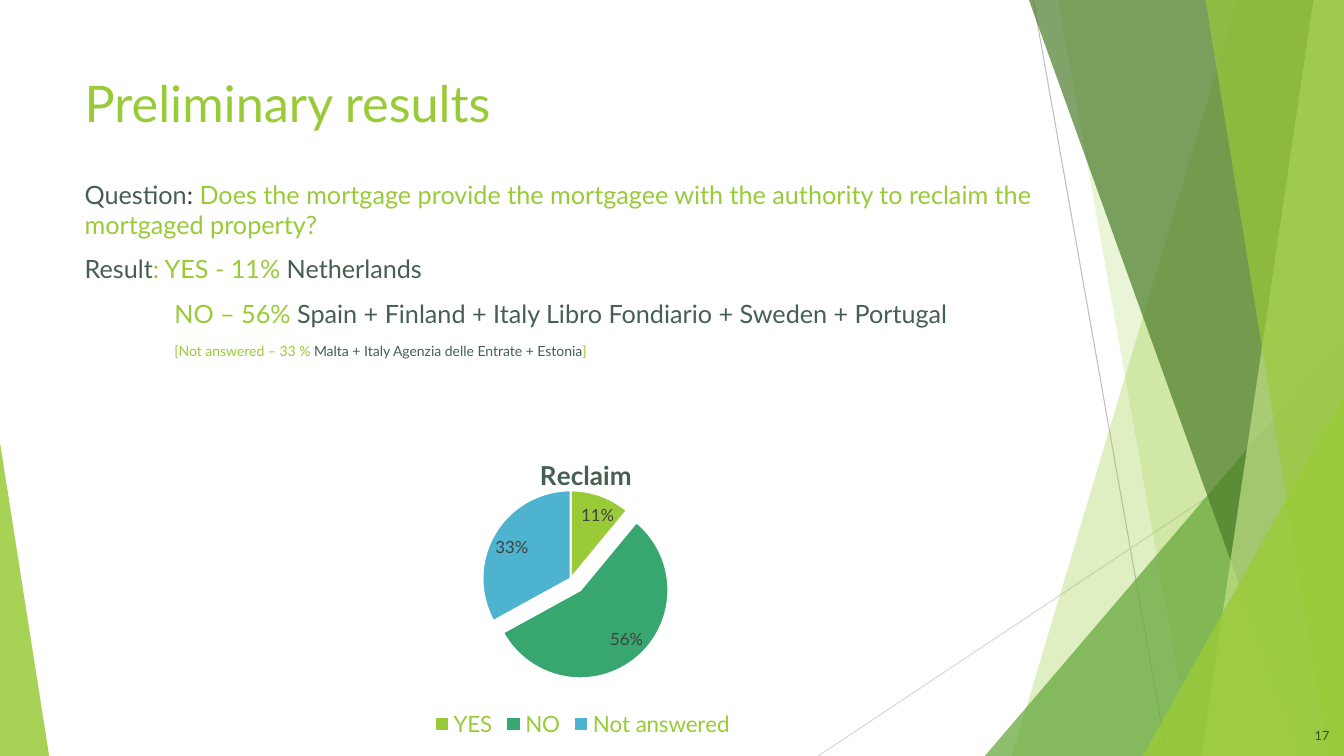
from lxml import etree
from pptx import Presentation
from pptx.chart.data import CategoryChartData as ChartData
from pptx.dml.color import RGBColor
from pptx.enum.chart import XL_CHART_TYPE as Kind, XL_LABEL_POSITION as Spot, XL_LEGEND_POSITION as Side
from pptx.enum.shapes import MSO_CONNECTOR as Link, MSO_SHAPE as Form
from pptx.enum.text import MSO_ANCHOR as Anchor, MSO_AUTO_SIZE as Fit, PP_ALIGN as Align
from pptx.oxml import parse_xml
from pptx.oxml.ns import nsdecls, qn
from pptx.util import Cm, Pt

WIDE, HIGH = 33.87, 19.05
LIME, DARK, GREY = "99CB38", "455F51", "404040"
FACE = "Lato"


def paint(color, code):
    color.rgb = RGBColor.from_string(code)


def style(font, size, code=None, bold=False):
    font.name, font.size, font.bold = FACE, Pt(size), bold
    if code:
        paint(font.color, code)


def tint(shape, code, alpha):
    """Fill a shape with a see-through colour (alpha in percent), without line or shadow."""
    shape.shadow.inherit = False
    shape.line.fill.background()
    shape.fill.solid()
    paint(shape.fill.fore_color, code)
    tone = shape.fill._xPr.find(".//" + qn("a:srgbClr"))
    etree.SubElement(tone, qn("a:alpha")).set("val", str(alpha * 1000))


def place(shape, box):
    shape.left, shape.top, shape.width, shape.height = map(Cm, box)


def ray(slide, start, end, code):
    line = slide.shapes.add_connector(Link.STRAIGHT, *map(Cm, start + end))
    paint(line.line.color, code)
    line.line.width = Pt(0.75)
    etree.SubElement(line._element.spPr, qn("a:effectLst"))


def facet(slide, top, foot, code, alpha):
    """Draw a panel from a slanted left edge to the right side of the slide."""
    pen = slide.shapes.build_freeform(Cm(top), 0)
    pen.add_line_segments([(Cm(x), Cm(y)) for x, y in
                           ((WIDE, 0), (WIDE, HIGH), (foot, HIGH))])
    tint(pen.convert_to_shape(), code, alpha)


def wedge(slide, box, tip, code, alpha):
    shape = slide.shapes.add_shape(Form.ISOSCELES_TRIANGLE, *map(Cm, box))
    shape.adjustments[0] = tip
    tint(shape, code, alpha)


def backdrop(slide):
    ray(slide, (26.04, 0), (29.41, HIGH), "BFBFBF")
    ray(slide, (WIDE, 10.24), (20.62, HIGH), "D9D9D9")
    facet(slide, 31.19, 25.5, LIME, 30)
    facet(slide, 26.67, 30.05, LIME, 20)
    wedge(slide, (24.82, 8.46, 9.05, 10.59), 1, "63A537", 72)
    facet(slide, 25.93, 32.79, "4A7C29", 70)
    facet(slide, 33.1, 30.28, "C2E088", 70)
    facet(slide, 30.38, 33.48, LIME, 65)
    wedge(slide, (28.8, 9.98, 5.07, 9.07), 1, LIME, 80)
    wedge(slide, (0, 11.15, 1.24, 7.9), 0, LIME, 85)


def front(shape):
    shape._element.getparent().append(shape._element)


def heading(slide, box):
    title = slide.shapes.title
    place(title, box)
    front(title)
    frame = title.text_frame
    frame.text = "Preliminary results"
    frame.auto_size, frame.vertical_anchor = Fit.NONE, Anchor.TOP
    para = frame.paragraphs[0]
    para.alignment = Align.LEFT
    style(para.font, 36, LIME)


def answers(slide, box):
    # size, left margin, first-line indent, coloured runs
    rows = [
        (18, 0, 0, [("Question", DARK), (": ", GREY),
                    ("Does the mortgage provide the mortgagee with the authority "
                     "to reclaim the mortgaged property?", LIME)]),
        (18, 0, 0, [("Result", DARK), (": YES - 11% ", LIME), ("Netherlands", DARK)]),
        (18, 0, 2.26, [("NO – 56% ", LIME),
                       ("Spain + Finland + Italy Libro Fondiario + Sweden + Portugal", DARK)]),
        (10, 2.26, 0, [("[Not answered – 33 % ", LIME),
                       ("Malta + Italy Agenzia delle Entrate + Estonia", DARK), ("]", LIME)]),
    ]
    body = slide.placeholders[1]
    place(body, box)
    front(body)
    frame = body.text_frame
    frame.auto_size = Fit.NONE
    for i, (size, left, first, runs) in enumerate(rows):
        para = frame.add_paragraph() if i else frame.paragraphs[0]
        props = para._p.get_or_add_pPr()
        props.set("marL", str(Cm(left)))
        props.set("indent", str(Cm(first)))
        etree.SubElement(props, qn("a:buNone"))
        para.space_before = Pt(10 if i else 0)
        style(para.font, size)
        for text, code in runs:
            run = para.add_run()
            run.text = text
            paint(run.font.color, code)


def number(slide, box):
    frame = slide.shapes.add_textbox(*map(Cm, box)).text_frame
    frame.word_wrap, frame.vertical_anchor = True, Anchor.MIDDLE
    para = frame.paragraphs[0]
    para.text, para.alignment = "17", Align.RIGHT
    style(para.font, 9, "31521C")


def layout(x, y, size=None):
    """Build a manual chart layout in fractions of the chart area."""
    parts = [("xMode", "edge"), ("yMode", "edge"), ("x", x), ("y", y)]
    if size:
        parts = [("layoutTarget", "inner")] + parts + [("w", size[0]), ("h", size[1])]
    inner = "".join(f'<c:{tag} val="{val}"/>' for tag, val in parts)
    return parse_xml(f'<c:layout {nsdecls("c")}><c:manualLayout>{inner}'
                     '</c:manualLayout></c:layout>')


def arrange(owner, new, before):
    for old in owner.findall(qn("c:layout")):
        owner.remove(old)
    owner.find(qn(before)).addprevious(new)


def pie(slide, box):
    data = ChartData()
    data.categories = ["YES", "NO", "Not answered"]
    data.add_series("Series 1", (11, 56, 33))
    chart = slide.shapes.add_chart(Kind.PIE, *map(Cm, box), data).chart
    style(chart.font, 10, "000000")

    chart.has_title = True
    frame = chart.chart_title.text_frame
    frame.text = "Reclaim"
    style(frame.paragraphs[0].font, 18.6, DARK, True)
    arrange(chart.chart_title._element, layout(0.42, 0.03), "c:overlay")

    chart.has_legend = True
    chart.legend.position = Side.BOTTOM
    chart.legend.include_in_layout = False
    style(chart.legend.font, 16, LIME)

    plot = chart.plots[0]
    plot.vary_by_categories = True
    arrange(plot._element.getparent(), layout(0, 0.16, (0.96, 0.59)), "c:pieChart")
    series = plot.series[0]
    for i, code in enumerate((LIME, "37A76F", "4EB3CF")):
        look = series.points[i].format
        look.fill.solid()
        paint(look.fill.fore_color, code)
        paint(look.line.color, "FFFFFF")
        look.line.width = Pt(1.5)
    slices = series._element.findall(qn("c:dPt"))
    burst = parse_xml(f'<c:explosion {nsdecls("c")} val="17"/>')
    slices[1].find(qn("c:spPr")).addprevious(burst)

    labels = series.data_labels
    labels.show_percentage, labels.show_value = True, False
    labels.number_format, labels.number_format_is_linked = "0%", False
    labels.position = Spot.BEST_FIT
    style(labels.font, 12, GREY)


def main():
    prs = Presentation()
    prs.slide_width, prs.slide_height = Cm(WIDE), Cm(HIGH)
    slide = prs.slides.add_slide(prs.slide_layouts[1])
    backdrop(slide)
    heading(slide, (1.88, 1.7, 23.88, 1.9))
    answers(slide, (1.88, 4.39, 24.74, 12.4))
    number(slide, (31.85, 18.03, 1.9, 1.02))
    pie(slide, (7.24, 11.15, 14.88, 7.54))
    prs.save("out.pptx")


if __name__ == "__main__":
    main()
